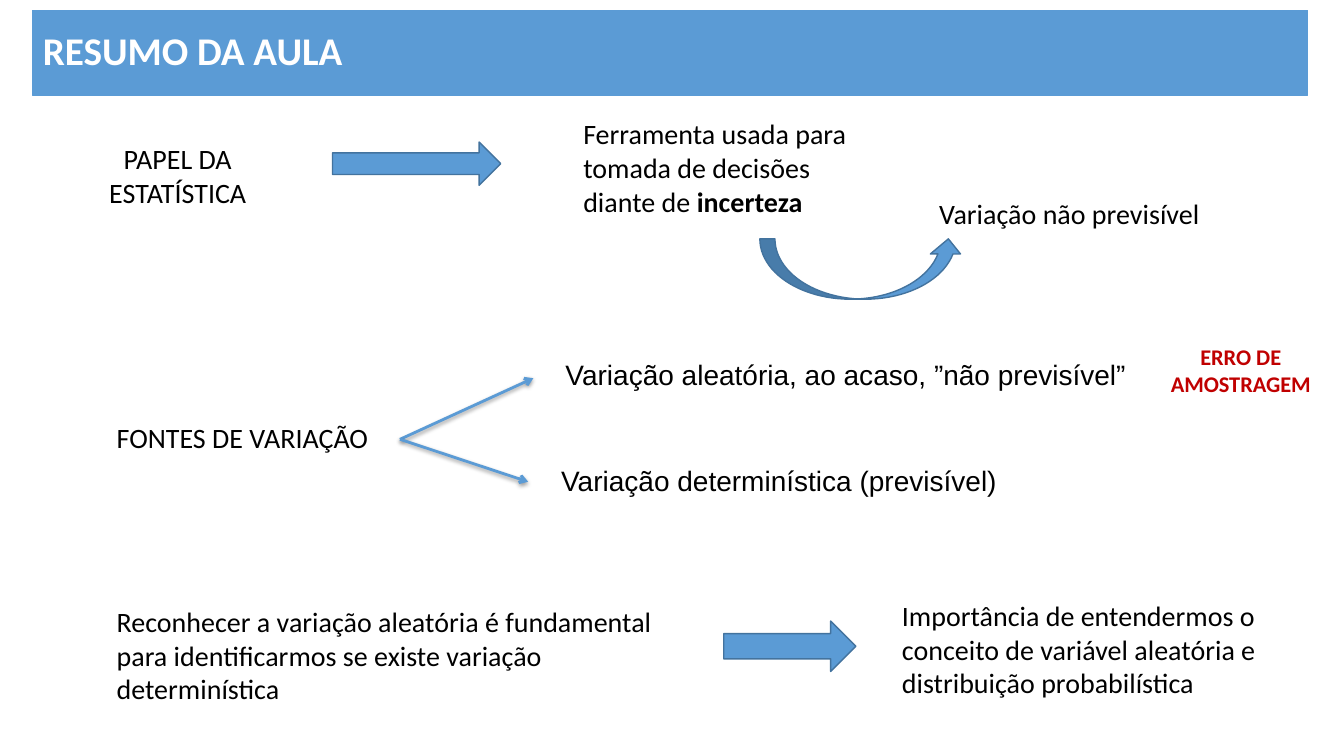
from lxml.etree import SubElement
from pptx import Presentation
from pptx.dml.color import RGBColor
from pptx.enum.shapes import MSO_CONNECTOR, MSO_SHAPE
from pptx.enum.text import MSO_ANCHOR, PP_ALIGN
from pptx.oxml import parse_xml
from pptx.oxml.ns import nsdecls, qn
from pptx.util import Cm, Pt

theme = {
    "blue": RGBColor(0x5B, 0x9B, 0xD5),
    "edge": RGBColor(0x43, 0x73, 0x9E),
    "red": RGBColor(0xC0, 0x00, 0x00),
    "black": RGBColor(0, 0, 0),
    "white": RGBColor(0xFF, 0xFF, 0xFF),
    "head": Pt(28),
    "body": Pt(20),
    "note": Pt(16),
    "font": "Calibri",
    "alt": "Arial",
}

deck = Presentation()
deck.slide_width, deck.slide_height = Cm(33.87), Cm(19.05)
slide = deck.slides.add_slide(deck.slide_layouts[6])
shapes = slide.shapes


def add_block(kind, box, edge, width):
    block = shapes.add_shape(kind, *map(Cm, box))
    block.shadow.inherit = False
    block.fill.solid()
    block.fill.fore_color.rgb = theme["blue"]
    block.line.color.rgb = theme[edge]
    block.line.width = Pt(width)
    return block


def set_text(shape, text, size="body", color="black", face="font",
             bold=None, align=PP_ALIGN.LEFT):
    shape.text_frame.word_wrap = True
    para = shape.text_frame.paragraphs[0]
    para.alignment = align
    para.font.size = theme[size]
    para.font.name = theme[face]
    para.font.color.rgb = theme[color]
    para.font.bold = bold
    para.add_run().text = text
    return para


# Title band
band = add_block(MSO_SHAPE.RECTANGLE, (0.83, 0.26, 32.13, 2.14), "blue", 0.75)
band.text_frame.vertical_anchor = MSO_ANCHOR.MIDDLE
title = set_text(band, "RESUMO DA AULA", "head", "white", bold=True)
title.line_spacing = 0.9

# Block arrows
arrows = [
    (MSO_SHAPE.RIGHT_ARROW, (8.38, 3.58, 4.24, 1.09)),
    (MSO_SHAPE.CURVED_UP_ARROW, (19.15, 6.02, 5.13, 1.52)),
    (MSO_SHAPE.RIGHT_ARROW, (18.24, 15.65, 3.33, 1.27)),
]
for kind, box in arrows:
    add_block(kind, box, "edge", 1)

# Branches from the sources of variation
for end in [(13.44, 9.53), (13.31, 12.14)]:
    branch = shapes.add_connector(
        MSO_CONNECTOR.STRAIGHT, Cm(10.08), Cm(11.07), *map(Cm, end))
    branch.line.color.rgb = theme["blue"]
    branch.line.width = Pt(2)
    SubElement(branch.line._get_or_add_ln(), qn("a:tailEnd"), type="arrow")
    branch._element.spPr.append(parse_xml(
        f'<a:effectLst {nsdecls("a")}>'
        '<a:outerShdw blurRad="40000" dist="20000" dir="5400000" rotWithShape="0">'
        '<a:srgbClr val="000000"><a:alpha val="38000"/></a:srgbClr>'
        '</a:outerShdw></a:effectLst>'))

# Texts
center = {"align": PP_ALIGN.CENTER}
alt = {"face": "alt"}
alert = {"size": "note", "color": "red", "bold": True, **center}
labels = [
    ((1.48, 3.45, 6, 1.96), "PAPEL DA ESTATÍSTICA", center),
    ((23.42, 4.83, 8.86, 1.12), "Variação não previsível", {}),
    ((2.69, 10.46, 7.39, 1.09), "FONTES DE VARIAÇÃO", {}),
    ((14, 8.89, 16.21, 1.12),
     "Variação aleatória, ao acaso, ”não previsível”", alt),
    ((13.89, 11.56, 15.95, 1.12), "Variação determinística (previsível)", alt),
    ((28.68, 8.53, 5.18, 1.63), "ERRO DE AMOSTRAGEM", alert),
    ((2.69, 15.11, 14.76, 2.82),
     "Reconhecer a variação aleatória é fundamental para identificarmos "
     "se existe variação determinística", {}),
    ((22.48, 14.96, 9.8, 2.82),
     "Importância de entendermos o conceito de variável aleatória e "
     "distribuição probabilística", {}),
]
for box, text, style in labels:
    set_text(shapes.add_textbox(*map(Cm, box)), text, **style)

# Role of statistics, with its key word in bold
role = shapes.add_textbox(Cm(14.45), Cm(2.82), Cm(7.62), Cm(2.82))
para = set_text(role, "Ferramenta usada para tomada de decisões diante de ")
key = para.add_run()
key.text = "incerteza"
key.font.bold = True

deck.save("out.pptx")
